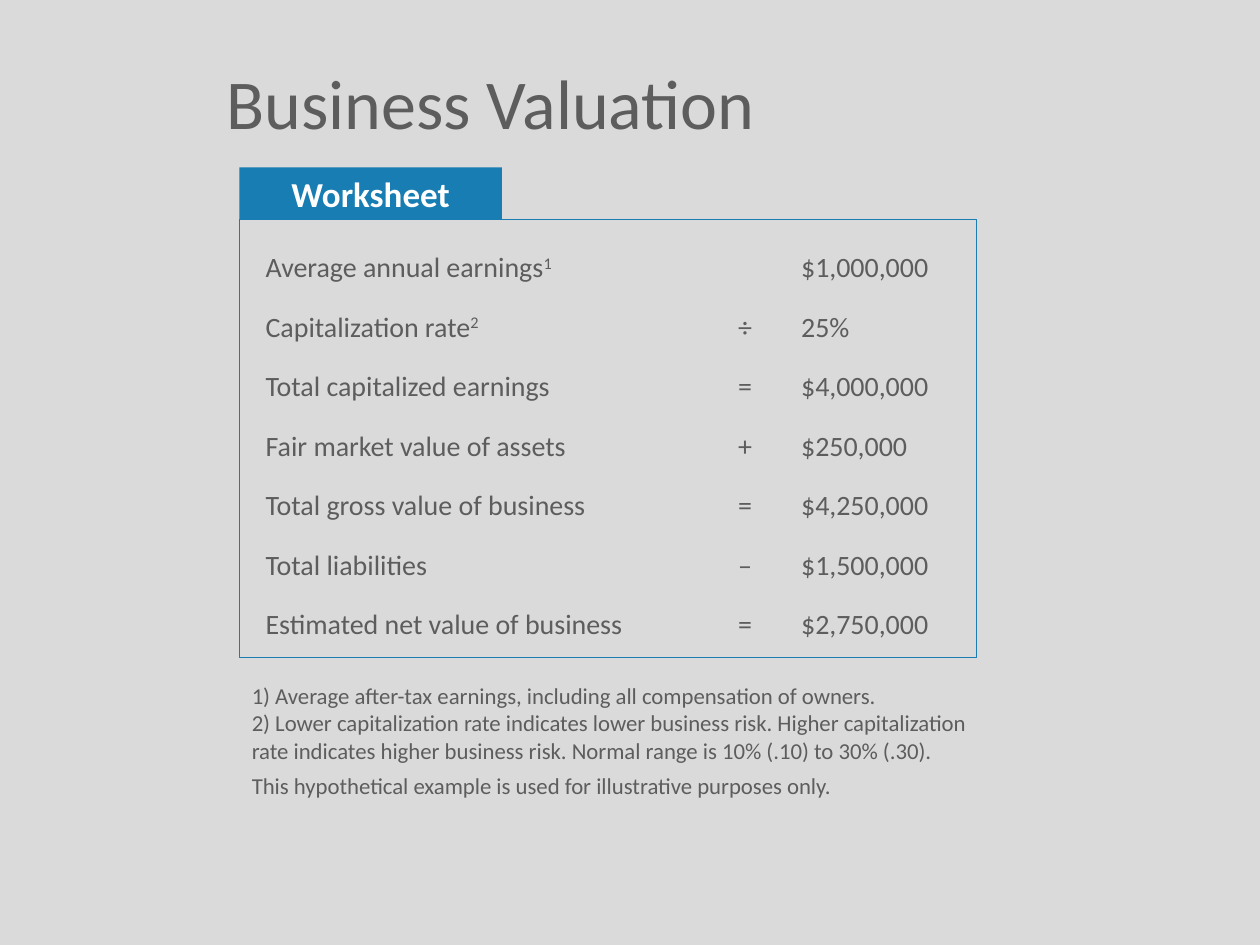
from lxml.etree import SubElement
from pptx import Presentation
from pptx.dml.color import RGBColor
from pptx.enum.shapes import MSO_SHAPE
from pptx.enum.text import MSO_ANCHOR, PP_ALIGN
from pptx.oxml.ns import qn
from pptx.util import Pt

GRAY = RGBColor(0x5D, 0x5D, 0x5D)
BLUE = RGBColor(0x17, 0x7D, 0xB3)
WHITE = RGBColor(0xFF, 0xFF, 0xFF)
BACKGROUND = RGBColor(0xDA, 0xDA, 0xDA)

# label, footnote mark, operator, value
WORKSHEET = [
    ("Average annual earnings", "1", "", "$1,000,000"),
    ("Capitalization rate", "2", "÷", "25%"),
    ("Total capitalized earnings", "", "=", "$4,000,000"),
    ("Fair market value of assets", "", "+", "$250,000"),
    ("Total gross value of business", "", "=", "$4,250,000"),
    ("Total liabilities", "", "–", "$1,500,000"),
    ("Estimated net value of business", "", "=", "$2,750,000"),
]
TABS = [(274, "ctr"), (306, "l")]
NOTES = [
    "1) Average after-tax earnings, including all compensation of owners.",
    "2) Lower capitalization rate indicates lower business risk. Higher capitalization"
    "\vrate indicates higher business risk. Normal range is 10% (.10) to 30% (.30).",
    "This hypothetical example is used for illustrative purposes only.",
]


class SlideBuilder:
    font = "Calibri"

    def __init__(self, slide):
        self.slide = slide
        fill = slide.background.fill
        fill.solid()
        fill.fore_color.rgb = BACKGROUND

    def style(self, p, size, color=GRAY, bold=False):
        p.font.name = self.font
        p.font.size = Pt(size)
        p.font.color.rgb = color
        p.font.bold = bold

    def title(self, text, left, top, width, height):
        s = self.slide.shapes.title
        s.left, s.top, s.width, s.height = map(Pt, (left, top, width, height))
        s.text_frame.vertical_anchor = MSO_ANCHOR.MIDDLE
        p = s.text_frame.paragraphs[0]
        p.text = text
        p.alignment = PP_ALIGN.LEFT
        p.line_spacing = 0.9
        self.style(p, 40)

    def rectangle(self, left, top, width, height, fill=None, line=None):
        s = self.slide.shapes.add_shape(
            MSO_SHAPE.RECTANGLE, *map(Pt, (left, top, width, height)))
        s.shadow.inherit = False
        if fill is None:
            s.fill.background()
        else:
            s.fill.solid()
            s.fill.fore_color.rgb = fill
        if line is None:
            s.line.fill.background()
        else:
            s.line.color.rgb = line
            s.line.width = Pt(0.75)
        return s

    def tab_label(self, text, left, top, width, height):
        tf = self.rectangle(left, top, width, height, fill=BLUE).text_frame
        tf.word_wrap = False
        tf.vertical_anchor = MSO_ANCHOR.MIDDLE
        p = tf.paragraphs[0]
        p.text = text
        p.alignment = PP_ALIGN.CENTER
        self.style(p, 20, WHITE, bold=True)

    def paragraphs(self, count, left, top, width, height):
        """Add a text box and return its empty paragraphs."""
        tf = self.slide.shapes.add_textbox(
            *map(Pt, (left, top, width, height))).text_frame
        tf.word_wrap = True
        for _ in range(count - 1):
            tf.add_paragraph()
        return tf.paragraphs

    def worksheet(self, rows, *box):
        for p, (label, mark, operator, value) in zip(self.paragraphs(len(rows), *box), rows):
            tab_list = SubElement(p._p.get_or_add_pPr(), qn("a:tabLst"))
            for position, align in TABS:
                SubElement(tab_list, qn("a:tab"), pos=str(Pt(position)), algn=align)
            p.line_spacing = Pt(34)
            self.style(p, 16)
            columns = f"\t{operator}\t{value}"
            if mark:
                p.add_run().text = label
                r = p.add_run()
                r.text = mark
                r._r.get_or_add_rPr().set("baseline", "30000")
                p.add_run().text = columns
            else:
                p.add_run().text = label + columns

    def notes(self, lines, *box):
        paragraphs = self.paragraphs(len(lines), *box)
        for p, line in zip(paragraphs, lines):
            p.text = line
            self.style(p, 13)
        paragraphs[-1].space_before = Pt(4.5)


def main():
    prs = Presentation()
    prs.slide_width, prs.slide_height = Pt(720), Pt(540)
    builder = SlideBuilder(prs.slides.add_slide(prs.slide_layouts[5]))
    builder.rectangle(136.8, 125.3, 421.2, 250.6, line=BLUE)
    builder.worksheet(WORKSHEET, 144.7, 124.5, 421.2, 247.7)
    builder.notes(NOTES, 136.8, 386, 564.5, 75.6)
    builder.tab_label("Worksheet", 136.8, 95.6, 150, 30)
    builder.title("Business Valuation", 122.4, 36.7, 643, 49)
    prs.save("out.pptx")


if __name__ == "__main__":
    main()
